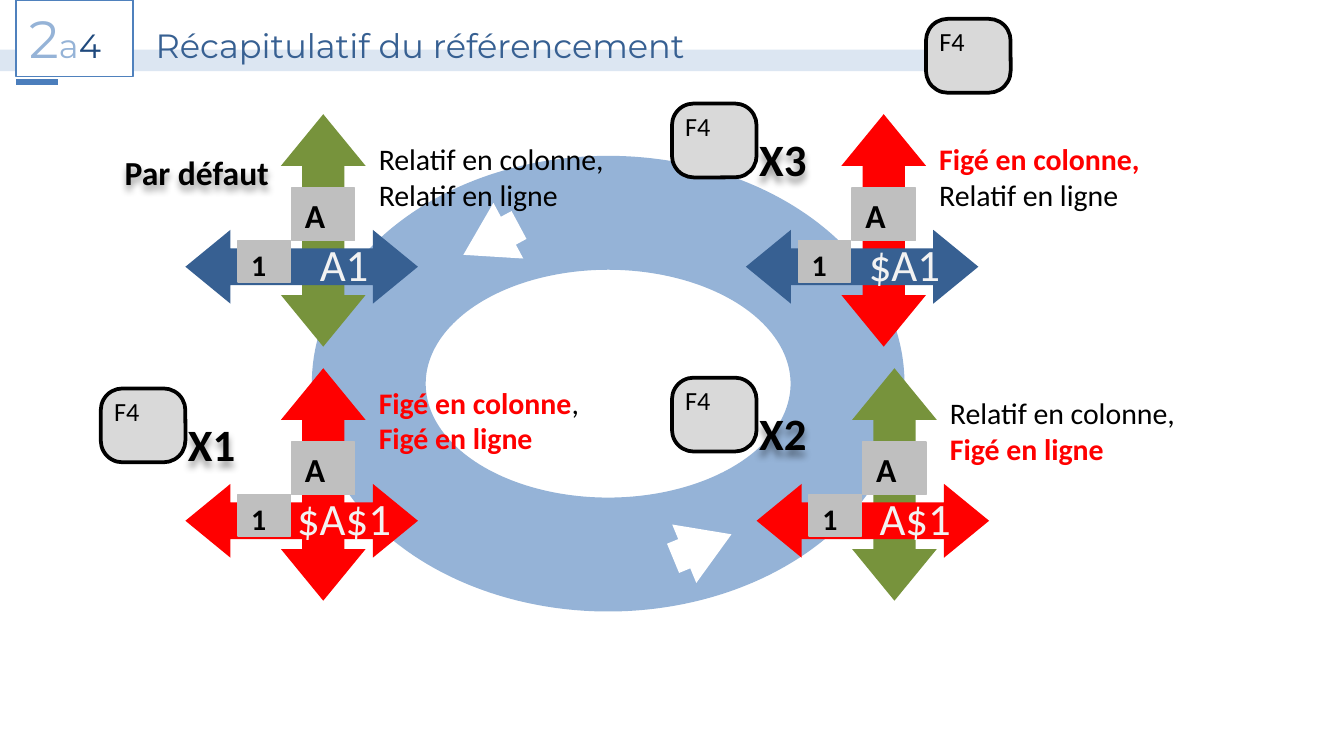
from dataclasses import dataclass
from typing import NamedTuple, Optional

from lxml import etree
from pptx import Presentation
from pptx import util as u
from pptx.dml.color import RGBColor
from pptx.enum import shapes as sh, text as tx
from pptx.oxml import ns

BLACK = RGBColor(0x00, 0x00, 0x00)
WHITE = RGBColor(0xFF, 0xFF, 0xFF)
PALE = RGBColor(0xF2, 0xF2, 0xF2)
RED = RGBColor(0xFF, 0x00, 0x00)
GREEN = RGBColor(0x77, 0x93, 0x3C)
NAVY = RGBColor(0x37, 0x60, 0x92)
INK = RGBColor(0x1F, 0x49, 0x7D)
BLUE = RGBColor(0x4F, 0x81, 0xBD)
RULE = RGBColor(0x4B, 0x7E, 0xBC)
SKY = RGBColor(0x95, 0xB3, 0xD7)
BAND = RGBColor(0xDC, 0xE6, 0xF2)
GREY = RGBColor(0xBF, 0xBF, 0xBF)
CAP = RGBColor(0xD9, 0xD9, 0xD9)

WIDE = u.Inches(10)
HIGH = WIDE * 9 // 16
UNIT = WIDE // 100  # the grid has 100 columns; rows are as tall as columns are wide
BODY, HEAD = "Calibri", "Montserrat"
KIND = sh.MSO_SHAPE


class Box(NamedTuple):
    col: float
    row: float
    cols: float
    rows: float

    def place(self) -> list:
        return [round(n * UNIT) for n in self]


class Bit(NamedTuple):
    words: str
    size: float
    color: RGBColor = BLACK
    bold: bool = False


@dataclass
class Cross:
    """One kind of cell reference, with its arrows and F4 key."""
    col: float
    row: float
    ref: str
    down: RGBColor
    side: RGBColor
    note: list
    rise: float = 4
    key: Optional[tuple] = None
    times: str = ""


def style(font, bit: Bit, face: str) -> None:
    font.name, font.size, font.bold = face, u.Pt(bit.size), bit.bold
    font.color.rgb = bit.color


def write(shape, bits: list, face: str = BODY, align=tx.PP_ALIGN.LEFT) -> None:
    frame = shape.text_frame
    frame.word_wrap = True
    frame.auto_size = tx.MSO_AUTO_SIZE.SHAPE_TO_FIT_TEXT
    frame.vertical_anchor = tx.MSO_ANCHOR.TOP
    para = frame.paragraphs[0]
    para.alignment = align
    for bit in bits:
        run = para.add_run()
        run.text = bit.words
        if len(bits) > 1:
            style(run.font, bit, face)
    if len(bits) == 1:
        style(para.font, bits[0], face)


def label(page, box: Box, *bits: Bit, face: str = BODY, align=tx.PP_ALIGN.LEFT):
    item = page.add_textbox(*box.place())
    write(item, list(bits), face, align)
    return item


def draw(page, kind, box: Box, fill: RGBColor, line=None, width: float = 0.75,
         turn: float = 0, adjust: tuple = ()):
    item = page.add_shape(kind, *box.place())
    item.shadow.inherit = False
    item.fill.solid()
    item.fill.fore_color.rgb = fill
    if line is None:
        item.line.fill.background()
    else:
        item.line.color.rgb = line
        item.line.width = u.Pt(width)
    item.rotation = turn
    for spot, share in enumerate(adjust):
        item.adjustments[spot] = share
    return item


def shade(item) -> None:
    """Soft shadow below the letters."""
    effects = etree.SubElement(item.element.spPr, ns.qn("a:effectLst"))
    drop = etree.SubElement(effects, ns.qn("a:outerShdw"), blurRad="50800",
                            dist="38100", dir="5400000", algn="t", rotWithShape="0")
    tint = etree.SubElement(drop, ns.qn("a:prstClr"), val="black")
    etree.SubElement(tint, ns.qn("a:alpha"), val="40000")


def draw_key(page, col: float, row: float, times: str = "") -> None:
    draw(page, KIND.ROUNDED_RECTANGLE, Box(col, row, 6.3, 5.5), CAP, BLACK, 2,
         adjust=(0.295,))
    label(page, Box(col, row, 5.2, 3.4), Bit("F4", 14))
    if times:
        shade(label(page, Box(col + 5.5, row + 1.6, 7.1, 5), Bit(times, 24, bold=True)))


def draw_cross(page, cross: Cross) -> None:
    col, row = cross.col, cross.row
    head = (0.5, 0.61)
    draw(page, KIND.LEFT_RIGHT_ARROW, Box(col + 1.6, row, 17.3, 6.3), cross.down,
         turn=90, adjust=head)
    draw(page, KIND.LEFT_RIGHT_ARROW, Box(col, row + 3.1, 17.3, 5.5), cross.side,
         adjust=head)
    label(page, Box(col + 13.4, row - cross.rise, 19.7, 6.4), *cross.note)
    label(page, Box(col + 7.1, row + 3.1, 9.4, 5), Bit(cross.ref, 24, PALE),
          align=tx.PP_ALIGN.CENTER)
    # Column and row headers
    draw(page, KIND.RECTANGLE, Box(col + 7.9, row, 4.7, 3.9), GREY, GREY)
    label(page, Box(col + 7.9, row, 3.1, 4), Bit("A", 18, bold=True))
    draw(page, KIND.RECTANGLE, Box(col + 3.9, row + 3.9, 3.9, 3.1), GREY, GREY)
    label(page, Box(col + 3.9, row + 3.9, 3.1, 3.7), Bit("1", 16, bold=True))
    if cross.key:
        draw_key(page, *cross.key, cross.times)


def fixed(words: str) -> Bit:
    return Bit(words, 16, RED, True)


def free(words: str) -> Bit:
    return Bit(words, 16)


CROSSES = [
    Cross(13.8, 14, "A1", GREEN, NAVY, [free("Relatif en colonne, Relatif en ligne")]),
    Cross(13.8, 32.9, "$A$1", RED, RED,
          [fixed("Figé en colonne"), free(", "), fixed("Figé en ligne")],
          4.8, (7.5, 28.9), "X1"),
    Cross(56.3, 32.9, "A$1", GREEN, RED,
          [free("Relatif en colonne, "), fixed("Figé en ligne")],
          4, (50, 28.1), "X2"),
    Cross(55.5, 14, "$A1", RED, NAVY,
          [fixed("Figé en colonne, "), free("Relatif en ligne")],
          4, (50, 7.7), "X3"),
]


def main() -> None:
    deck = Presentation()
    deck.slide_width, deck.slide_height = WIDE, HIGH
    page = deck.slides.add_slide(deck.slide_layouts[6]).shapes

    # Cycle ring with its direction arrows
    ring = page.add_group_shape().shapes
    draw(ring, KIND.DONUT, Box(23.2, 11.6, 44.1, 33.9), SKY, adjust=(0.25,))
    for col, row, turn in ((49.9, 38.3, 67.6), (34.2, 15.5, 241.8)):
        draw(ring, KIND.UP_ARROW, Box(col, row, 4.7, 4.7), WHITE, turn=turn,
             adjust=(0.5, 0.809))

    # Title band and section number
    draw(page, KIND.RECTANGLE, Box(0, 3.7, 72, 1.6), BAND)
    label(page, Box(10.6, 1.4, 64.6, 4),
          Bit("Récapitulatif du référencement", 18, NAVY), face=HEAD)
    badge = draw(page, KIND.RECTANGLE, Box(1.2, 0, 8.7, 5.7), WHITE, BLUE)
    write(badge, [Bit("2", 28, SKY), Bit("a", 18, SKY), Bit("4", 18, INK)], HEAD)
    rule = page.add_connector(sh.MSO_CONNECTOR.STRAIGHT,
                              *Box(4.3, 6.1, 1.2, 6.1).place())
    rule.line.color.rgb = RULE
    rule.line.width = u.Pt(3)
    etree.SubElement(rule.element.spPr, ns.qn("a:effectLst"))
    draw_key(page, 68.9, 1.4)

    # The four kinds of reference
    shade(label(page, Box(8.3, 10.8, 13.4, 4), Bit("Par défaut", 18, bold=True)))
    for cross in CROSSES:
        draw_cross(page.add_group_shape().shapes, cross)

    deck.save("out.pptx")


if __name__ == "__main__":
    main()
